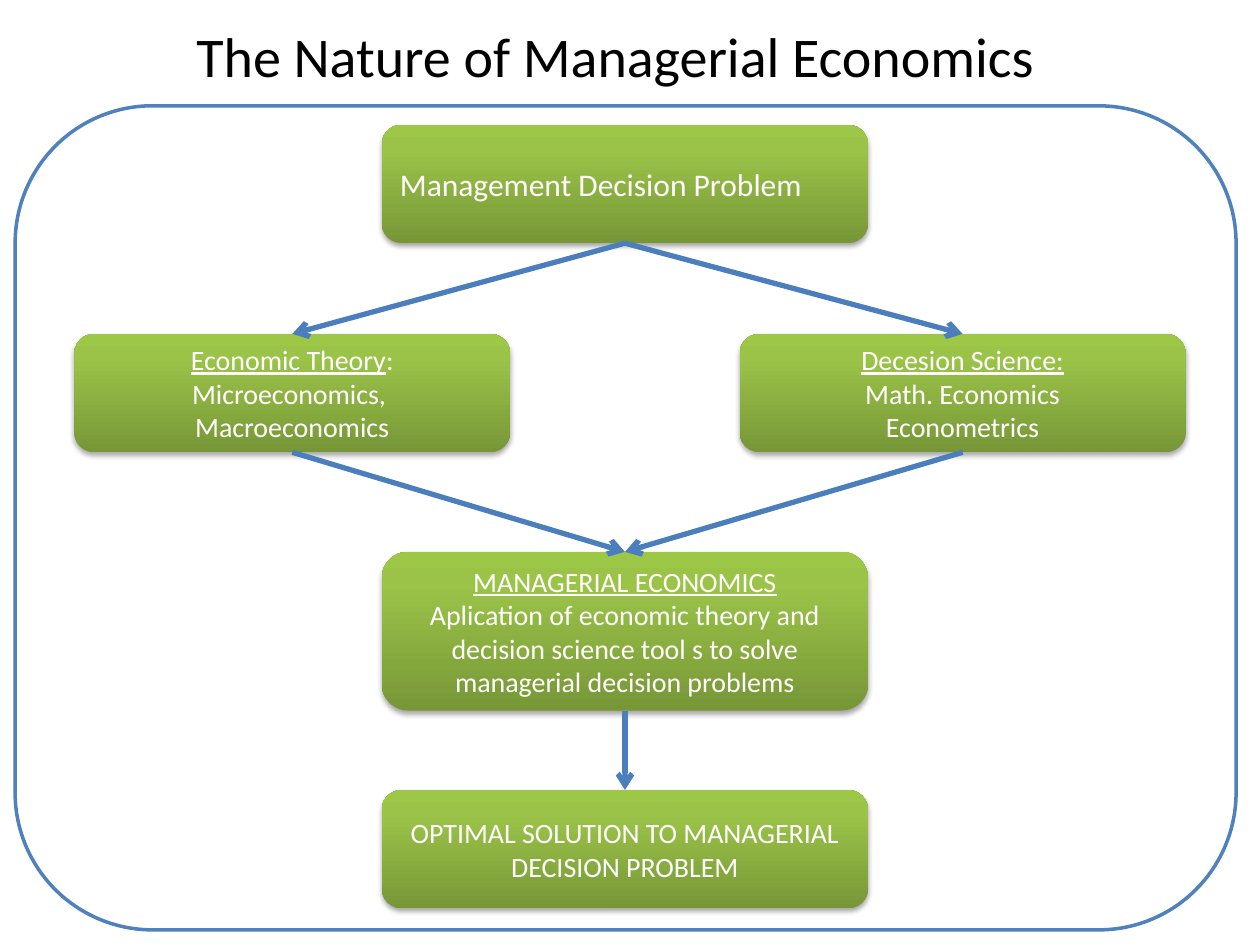
from dataclasses import dataclass

from pptx import Presentation
from pptx.dml.color import RGBColor
from pptx.enum.shapes import MSO_CONNECTOR, MSO_SHAPE
from pptx.enum.text import MSO_ANCHOR, MSO_AUTO_SIZE, PP_ALIGN
from pptx.oxml import parse_xml
from pptx.oxml.ns import nsdecls
from pptx.util import Inches, Pt


@dataclass(frozen=True)
class Theme:
    font: str = "Calibri"
    title_size: int = 32
    lead_size: int = 18
    body_size: int = 16
    ink: str = "000000"
    paper: str = "FFFFFF"
    frame: str = "4F81BD"
    arrow: str = "4B7EBC"
    shadow: str = "000000"
    greens: tuple = ((0, "779737"), (80, "9BC348"), (100, "9DC746"))


@dataclass(frozen=True)
class Box:
    """A green box; its heading is underlined, followed by tail, then lines."""
    left: float
    top: float
    width: float
    lines: tuple
    heading: str = ""
    tail: str = ""
    height: float = 0.94
    size: int = Theme.body_size
    align: PP_ALIGN = PP_ALIGN.CENTER


THEME = Theme()
MID_LEFT, MID_WIDTH = 3.03, 3.86
ROW_2 = 2.65
TOP, BOTTOM = 0, 2  # connection sites of a rounded rectangle

BOXES = {
    "problem": Box(MID_LEFT, 0.99, MID_WIDTH, ("Management Decision Problem",),
                   size=THEME.lead_size, align=PP_ALIGN.LEFT),
    "science": Box(5.87, ROW_2, 3.54, ("Math. Economics", "Econometrics"),
                   heading="Decesion Science:"),
    "theory": Box(0.59, ROW_2, 3.46, ("Microeconomics, ", "Macroeconomics"),
                  heading="Economic Theory", tail=":"),
    "managerial": Box(MID_LEFT, 4.38, MID_WIDTH,
                      ("Aplication of economic theory and decision science "
                       "tool s to solve managerial decision problems",),
                      heading="MANAGERIAL ECONOMICS", height=1.26),
    "solution": Box(MID_LEFT, 6.27, MID_WIDTH,
                    ("OPTIMAL SOLUTION TO MANAGERIAL DECISION PROBLEM",)),
}
ARROWS = (("problem", "theory"), ("problem", "science"),
          ("theory", "managerial"), ("science", "managerial"),
          ("managerial", "solution"))


def style_font(font, size: int, color: str) -> None:
    font.name = THEME.font
    font.size = Pt(size)
    font.color.rgb = RGBColor.from_string(color)


def add_rounded(s, left: float, top: float, width: float, height: float):
    sp = s.shapes.add_shape(MSO_SHAPE.ROUNDED_RECTANGLE, Inches(left),
                            Inches(top), Inches(width), Inches(height))
    sp.shadow.inherit = False
    return sp


def add_frame(s) -> None:
    sp = add_rounded(s, 0.12, 0.84, 9.69, 6.54)
    sp.fill.solid()
    sp.fill.fore_color.rgb = RGBColor.from_string(THEME.paper)
    sp.line.color.rgb = RGBColor.from_string(THEME.frame)
    sp.line.width = Pt(2)


def apply_green(sp) -> None:
    """Three-stop gradient, dark at the bottom, with a soft shadow below."""
    sp.line.fill.background()
    sp.fill.gradient()
    sp.fill.gradient_angle = 90
    spPr = sp._element.spPr
    stops = "".join(f'<a:gs pos="{pos * 1000}"><a:srgbClr val="{color}"/></a:gs>'
                    for pos, color in THEME.greens)
    old = spPr.find(".//{*}gsLst")
    old.getparent().replace(
        old, parse_xml(f'<a:gsLst {nsdecls("a")}>{stops}</a:gsLst>'))
    spPr.find("{*}effectLst").append(parse_xml(
        f'<a:outerShdw {nsdecls("a")} blurRad="{Pt(3.1)}" dist="{Pt(1.8)}" '
        f'dir="5400000" rotWithShape="0"><a:srgbClr val="{THEME.shadow}">'
        '<a:alpha val="35000"/></a:srgbClr></a:outerShdw>'))


def add_box(s, box: Box):
    sp = add_rounded(s, box.left, box.top, box.width, box.height)
    apply_green(sp)
    tf = sp.text_frame
    tf.word_wrap = True
    tf.vertical_anchor = MSO_ANCHOR.MIDDLE
    texts = ((box.heading,) if box.heading else ()) + box.lines
    for i, text in enumerate(texts):
        p = tf.add_paragraph() if i else tf.paragraphs[0]
        p.alignment = box.align
        style_font(p.font, box.size, THEME.paper)
        r = p.add_run()
        r.text = text
        if text == box.heading:
            r.font.underline = True
            if box.tail:
                p.add_run().text = box.tail
    return sp


def add_arrow(s, source, target) -> None:
    cn = s.shapes.add_connector(MSO_CONNECTOR.STRAIGHT, 0, 0, 0, 0)
    cn.begin_connect(source, BOTTOM)
    cn.end_connect(target, TOP)
    cn.line.color.rgb = RGBColor.from_string(THEME.arrow)
    cn.line.width = Pt(3)
    cn.line._get_or_add_ln().append(
        parse_xml(f'<a:tailEnd {nsdecls("a")} type="arrow"/>'))
    cn._element.spPr.append(parse_xml(f'<a:effectLst {nsdecls("a")}/>'))


def add_title(s, text: str) -> None:
    tf = s.shapes.add_textbox(Inches(1.46), Inches(0.12),
                              Inches(6.92), Inches(0.64)).text_frame
    tf.word_wrap = False
    tf.auto_size = MSO_AUTO_SIZE.SHAPE_TO_FIT_TEXT
    p = tf.paragraphs[0]
    p.text = text
    style_font(p.font, THEME.title_size, THEME.ink)


def main() -> None:
    prs = Presentation()
    prs.slide_width, prs.slide_height = Inches(10), Inches(7.5)
    s = prs.slides.add_slide(prs.slide_layouts[6])
    add_frame(s)
    shapes = {name: add_box(s, box) for name, box in BOXES.items()}
    for source, target in ARROWS:
        add_arrow(s, shapes[source], shapes[target])
    add_title(s, "The Nature of Managerial Economics")
    prs.save("out.pptx")


if __name__ == "__main__":
    main()
